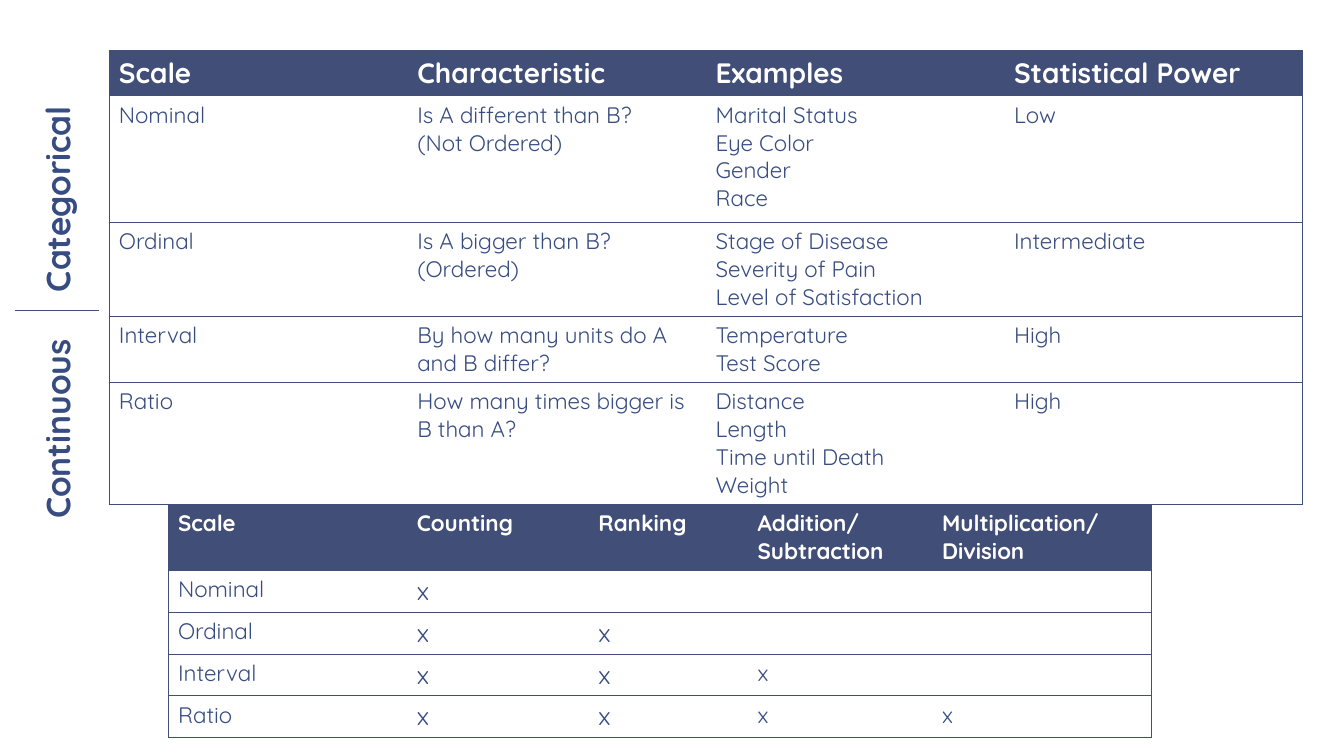
from dataclasses import dataclass

from lxml.etree import SubElement
from pptx import Presentation
from pptx.dml.color import RGBColor
from pptx.enum.shapes import MSO_CONNECTOR
from pptx.oxml import parse_xml
from pptx.oxml.ns import nsdecls, qn
from pptx.util import Emu, Inches, Pt

NAVY = RGBColor(0x41, 0x4E, 0x77)
BLUE = RGBColor(0x37, 0x4C, 0x81)
WHITE = RGBColor(0xFF, 0xFF, 0xFF)
WIDTH, HEIGHT = Inches(13.33), Inches(7.5)
LINE_WIDTH = Pt(0.5)


@dataclass
class Grid:
    left: float
    top: float
    cols: list[float]
    rows: list[float]
    head_size: int
    sizes: list[int]
    cells: list[list[str]]


@dataclass
class Label:
    text: str
    top: float


GRIDS = [
    Grid(8.1, 6.67, [22.2] * 4, [6, 16.75, 12.4, 8.7, 16.13], 20, [16] * 4, [
        ["Scale", "Characteristic", "Examples", "Statistical Power"],
        ["Nominal", "Is A different than B?\n(Not Ordered)",
         "Marital Status\nEye Color\nGender\nRace", "Low"],
        ["Ordinal", "Is A bigger than B?\n(Ordered)",
         "Stage of Disease\nSeverity of Pain\nLevel of Satisfaction", "Intermediate"],
        ["Interval", "By how many units do A and B differ?",
         "Temperature\nTest Score", "High"],
        ["Ratio", "How many times bigger is B than A?",
         "Distance\nLength\nTime until Death\nWeight", "High"],
    ]),
    Grid(12.5, 66.67, [17.78, 13.5, 11.85, 13.73, 16.28], [8.8] + [5.5] * 4,
         16, [16, 18, 18, 16, 16], [
        ["Scale", "Counting", "Ranking", "Addition/ Subtraction",
         "Multiplication/ Division"],
        ["Nominal", "x", "", "", ""],
        ["Ordinal", "x", "x", "", ""],
        ["Interval", "x", "x", "x", ""],
        ["Ratio", "x", "x", "x", "x"],
    ]),
]
LABELS = [Label("Categorical", 21.6), Label("Continuous", 51.6)]


def across(share: float) -> Emu:
    return Emu(round(WIDTH * share / 100))


def down(share: float) -> Emu:
    return Emu(round(HEIGHT * share / 100))


def write(tf, text: str, size: int, color: RGBColor, bold: bool) -> None:
    tf.text = text
    for p in tf.paragraphs:
        for r in p.runs:
            values = {"name": "Quicksand", "size": Pt(size), "bold": bold}
            for key, value in values.items():
                setattr(r.font, key, value)
            r.font.color.rgb = color


def set_borders(cell, shown: dict[str, bool]) -> None:
    tc_pr = cell._tc.get_or_add_tcPr()
    for i, (side, visible) in enumerate(shown.items()):
        paint = (f'<a:solidFill><a:srgbClr val="{NAVY}"/></a:solidFill>'
                 if visible else "<a:noFill/>")
        tc_pr.insert(i, parse_xml(
            f'<a:ln{side} {nsdecls("a")} w="{LINE_WIDTH}">{paint}</a:ln{side}>'))


def add_grid(s, grid: Grid) -> None:
    table = s.shapes.add_table(
        len(grid.rows), len(grid.cols), across(grid.left), down(grid.top),
        across(sum(grid.cols)), down(sum(grid.rows))).table
    table.horz_banding = False
    for col, share in zip(table.columns, grid.cols):
        col.width = across(share)
    for row, share in zip(table.rows, grid.rows):
        row.height = down(share)
    for i, texts in enumerate(grid.cells):
        for j, text in enumerate(texts):
            cell = table.cell(i, j)
            head = i == 0
            if head:
                cell.fill.solid()
                cell.fill.fore_color.rgb = NAVY
            else:
                cell.fill.background()
            if text:
                write(cell.text_frame, text, grid.head_size if head else grid.sizes[j],
                      WHITE if head else BLUE, head)
            set_borders(cell, {"L": j == 0, "R": j == len(texts) - 1,
                               "T": True, "B": True})


def add_label(s, label: Label) -> None:
    sp = s.shapes.add_textbox(across(-4.2), down(label.top), across(16.88), down(6.67))
    sp.rotation = 270
    sp.text_frame.word_wrap = True
    write(sp.text_frame, label.text, 24, BLUE, True)


def add_divider(s) -> None:
    line = s.shapes.add_connector(
        MSO_CONNECTOR.STRAIGHT, across(1.13), down(41.07), across(7.35), down(41.07))
    line.line.color.rgb = NAVY
    line.line.width = LINE_WIDTH
    SubElement(line._element.spPr, qn("a:effectLst"))


def main() -> None:
    prs = Presentation()
    prs.slide_width, prs.slide_height = WIDTH, HEIGHT
    s = prs.slides.add_slide(prs.slide_layouts[6])
    for grid in GRIDS:
        add_grid(s, grid)
    for label in LABELS:
        add_label(s, label)
    add_divider(s)
    prs.save("out.pptx")


if __name__ == "__main__":
    main()
